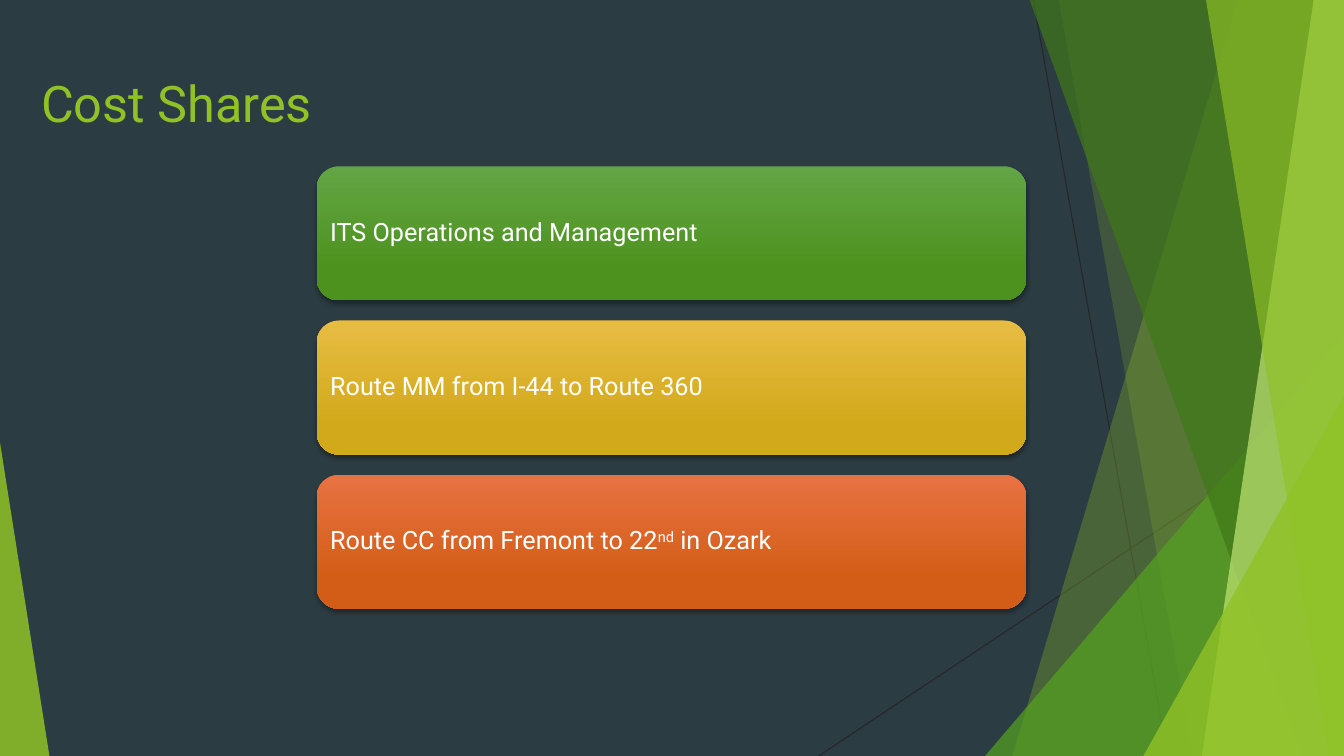
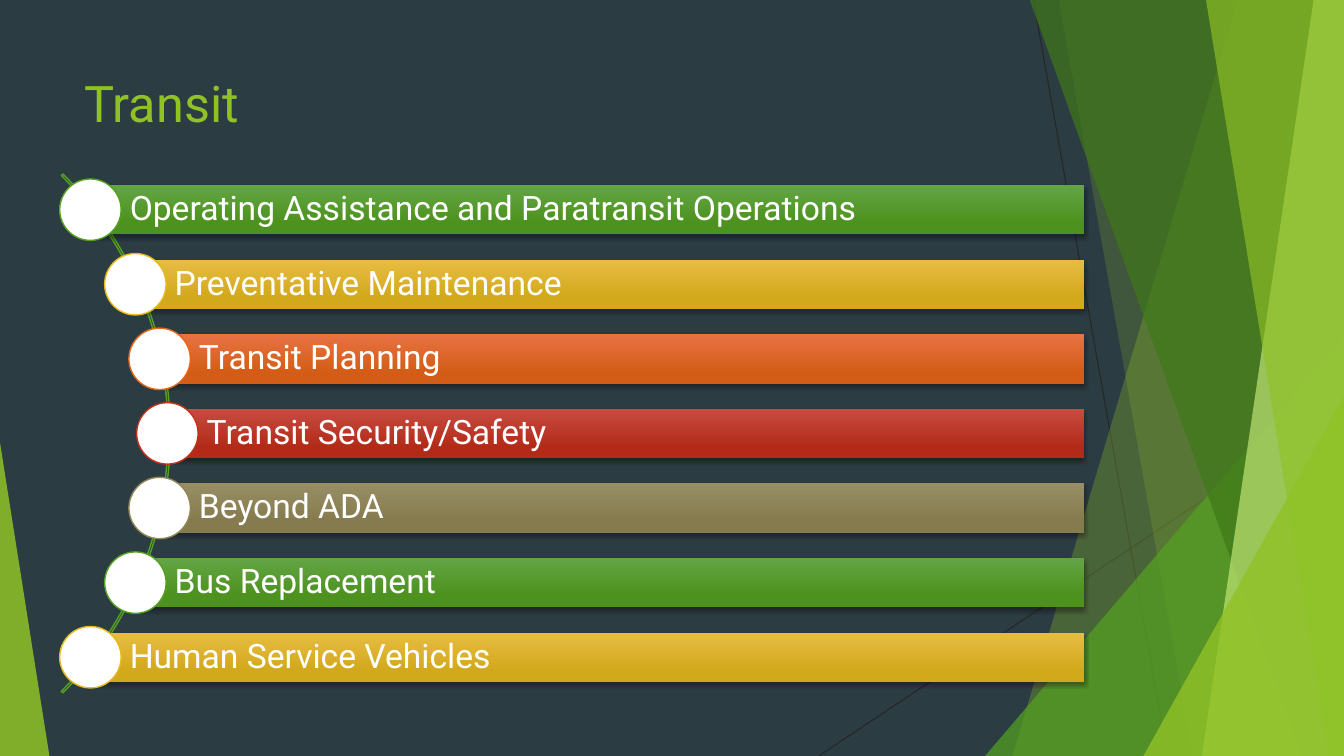
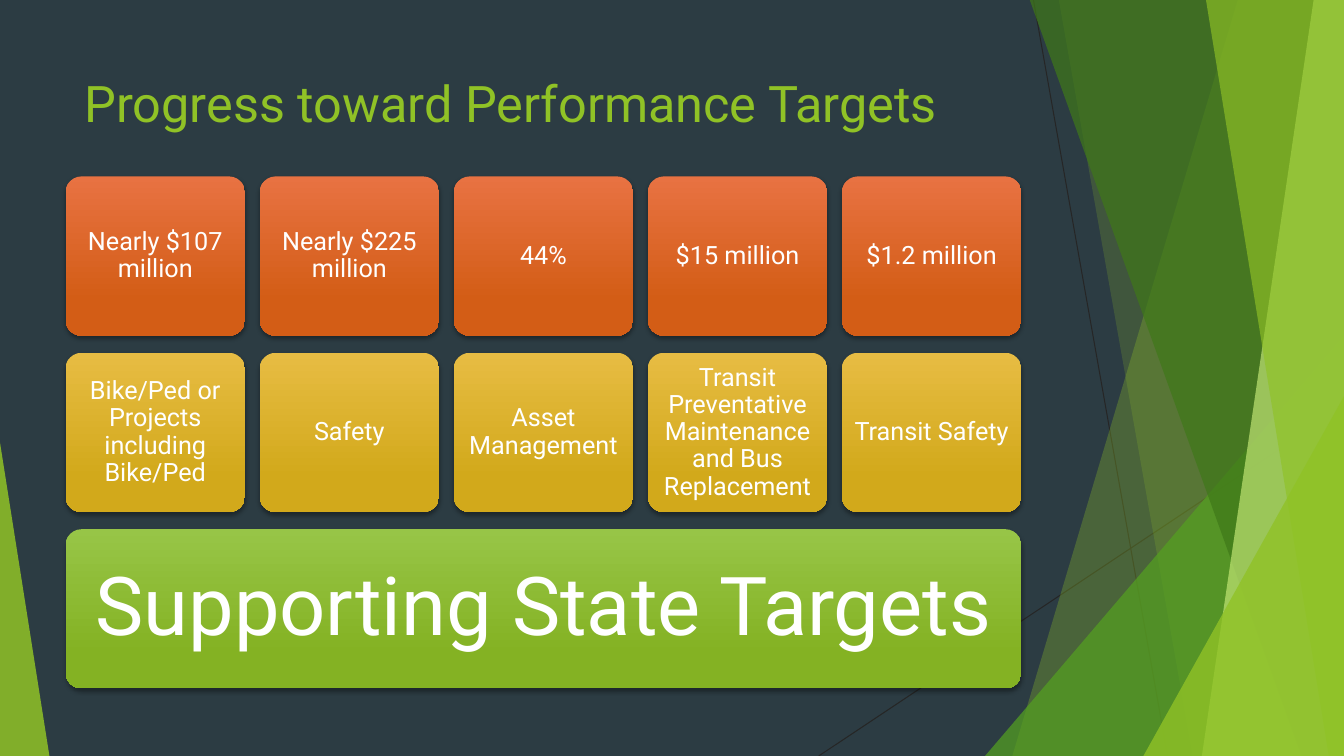
from math import sqrt

from lxml import etree
from pptx import Presentation
from pptx.dml.color import RGBColor
from pptx.enum.shapes import MSO_CONNECTOR, MSO_SHAPE
from pptx.enum.text import MSO_ANCHOR, PP_ALIGN
from pptx.oxml.ns import qn
from pptx.util import Inches, Pt

STRAIGHT = MSO_CONNECTOR.STRAIGHT
TRIANGLE = MSO_SHAPE.ISOSCELES_TRIANGLE
ROUNDED = MSO_SHAPE.ROUNDED_RECTANGLE
RECTANGLE = MSO_SHAPE.RECTANGLE
OVAL = MSO_SHAPE.OVAL
BLOCK_ARC = MSO_SHAPE.BLOCK_ARC
MIDDLE, TOP = MSO_ANCHOR.MIDDLE, MSO_ANCHOR.TOP
LEFT, CENTER = PP_ALIGN.LEFT, PP_ALIGN.CENTER

WIDTH, HEIGHT = 13.33, 7.5
FONT = "Roboto"
COLORS = {
    "background": "2C3C43", "white": "FFFFFF", "black": "000000", "hairline": "262626",
    "forest": "3F7819", "pale": "C0E474",
    "lime": "90C226", "lime_top": "97C547", "lime_bottom": "84B223",
    "green": "54A021", "green_top": "63A545", "green_bottom": "4D921E",
    "gold": "E6B91E", "gold_top": "E7BC43", "gold_bottom": "D2A91B",
    "orange": "E76618", "orange_top": "E87242", "orange_bottom": "D35D16",
    "red": "C42F1A", "red_top": "C74B42", "red_bottom": "B32B18",
    "olive": "918655", "olive_top": "988E64", "olive_bottom": "857B4E",
}


def color(name):
    return RGBColor.from_string(COLORS[name])


class Deck:
    def __init__(self):
        self.deck = Presentation()
        self.deck.slide_width = Inches(WIDTH)
        self.deck.slide_height = Inches(HEIGHT)
        self.slide = None

    def new_slide(self, title, title_left=0.74):
        self.slide = self.deck.slides.add_slide(self.deck.slide_layouts[6])
        fill = self.slide.background.fill
        fill.solid()
        fill.fore_color.rgb = color("background")
        self.backdrop()
        box = self.slide.shapes.add_textbox(
            Inches(title_left), Inches(0.67), Inches(9.4), Inches(1.44))
        self.set_text(box, [title], 36, "lime", anchor=TOP)

    def backdrop(self):
        self.hairline(10.25, 0, 11.58, HEIGHT)
        self.hairline(WIDTH, 4.03, 8.12, HEIGHT)
        self.wedge(12.28, 10.04, "lime", 30)
        self.wedge(10.5, 11.83, "lime", 20)
        self.triangle(9.77, 3.33, 3.56, 1, "green", 72)
        self.wedge(10.21, 12.91, "forest", 70)
        self.wedge(13.03, 11.92, "pale", 70)
        self.wedge(11.96, 13.18, "lime", 65)
        self.triangle(11.34, 3.93, 1.99, 1, "lime", 80)
        self.triangle(0, 4.39, 0.49, 0, "lime", 85)

    def hairline(self, x1, y1, x2, y2):
        line = self.slide.shapes.add_connector(
            STRAIGHT, Inches(x1), Inches(y1), Inches(x2), Inches(y2))
        line.line.color.rgb = color("hairline")
        line.line.width = Pt(0.75)
        etree.SubElement(line._element.spPr, qn("a:effectLst"))

    def wedge(self, top_x, bottom_x, name, opacity):
        builder = self.slide.shapes.build_freeform(Inches(top_x), Inches(-0.01))
        corners = [(WIDTH, -0.01), (WIDTH, HEIGHT), (bottom_x, HEIGHT)]
        builder.add_line_segments([(Inches(x), Inches(y)) for x, y in corners])
        self.tint(builder.convert_to_shape(), name, opacity)

    def triangle(self, left, top, width, apex, name, opacity):
        shape = self.shape(TRIANGLE, left, top, width, HEIGHT - top)
        shape.adjustments[0] = apex
        self.tint(shape, name, opacity)

    def tint(self, shape, name, opacity):
        shape.shadow.inherit = False
        shape.line.fill.background()
        shape.fill.solid()
        shape.fill.fore_color.rgb = color(name)
        fill_color = shape._element.spPr.find(".//" + qn("a:srgbClr"))
        etree.SubElement(fill_color, qn("a:alpha"), val=str(opacity * 1000))

    def shape(self, kind, left, top, width, height):
        shape = self.slide.shapes.add_shape(
            kind, Inches(left), Inches(top), Inches(width), Inches(height))
        shape.shadow.inherit = False
        return shape

    def panel(self, kind, place, name, spans, size, align=LEFT, inset=0.07,
              left_inset=None, rounding=None):
        panel = self.shape(kind, *place)
        if rounding:
            panel.adjustments[0] = rounding
        panel.line.fill.background()
        panel.fill.gradient()
        panel.fill.gradient_angle = 270
        stops = panel.fill.gradient_stops
        for stop, position, shade in zip(stops, (0, 0.78), ("top", "bottom")):
            stop.position = position
            stop.color.rgb = color(f"{name}_{shade}")
        self.drop_shadow(panel)
        self.set_text(panel, spans, size, "white", align)
        frame = panel.text_frame
        frame.margin_left = Inches(left_inset or inset)
        frame.margin_top = frame.margin_right = frame.margin_bottom = Inches(inset)
        frame.paragraphs[0].line_spacing = 0.9

    def drop_shadow(self, shape):
        effects = shape._element.spPr.find(qn("a:effectLst"))
        shadow = etree.SubElement(
            effects, qn("a:outerShdw"), blurRad=str(Pt(3)), dist=str(Pt(2)),
            dir="5400000", algn="ctr", rotWithShape="0")
        shade = etree.SubElement(shadow, qn("a:srgbClr"), val=COLORS["black"])
        etree.SubElement(shade, qn("a:alpha"), val="35000")

    def set_text(self, box, spans, size, name, align=LEFT, anchor=MIDDLE):
        frame = box.text_frame
        frame.word_wrap = True
        frame.vertical_anchor = anchor
        para = frame.paragraphs[0]
        para.alignment = align
        for index, text in enumerate(spans):
            span = para.add_run()
            span.text = text
            span.font.name = FONT
            span.font.size = Pt(size)
            span.font.color.rgb = color(name)
            if index % 2:
                span._r.get_or_add_rPr().set("baseline", "30000")

    def dot(self, center_x, center_y, size, name):
        dot = self.shape(OVAL, center_x - size / 2, center_y - size / 2, size, size)
        dot.fill.solid()
        dot.fill.fore_color.rgb = color("white")
        self.outline(dot, name)

    def arc(self, center_x, center_y, radius):
        arc = self.shape(BLOCK_ARC, center_x - radius, center_y - radius,
                         2 * radius, 2 * radius)
        for index, value in enumerate((189, 27, 0.003)):
            arc.adjustments[index] = value
        arc.fill.background()
        self.outline(arc, "green")

    def outline(self, shape, name):
        shape.line.color.rgb = color(name)
        shape.line.width = Pt(1)


def cost_shares(deck):
    deck.new_slide("Cost Shares", title_left=0.31)
    cards = [
        ("green", ["ITS Operations and Management"]),
        ("gold", ["Route MM from I-44 to Route 360"]),
        ("orange", ["Route CC from Fremont to 22", "nd", " in Ozark"]),
    ]
    for row, (name, spans) in enumerate(cards):
        deck.panel(ROUNDED, (3.14, 1.65 + row * 1.53, 7.04, 1.33), name, spans, 18)


def transit(deck):
    deck.new_slide("Transit")
    center_x, center_y, radius = -1.95, 4.3, 3.61
    pitch, bar_height, right = 0.74, 0.49, 10.75
    bars = [
        ("green", "Operating Assistance and Paratransit Operations"),
        ("gold", "Preventative Maintenance"),
        ("orange", "Transit Planning"),
        ("red", "Transit Security/Safety"),
        ("olive", "Beyond ADA"),
        ("green", "Bus Replacement"),
        ("gold", "Human Service Vehicles"),
    ]
    deck.arc(center_x, center_y, 3.64)
    for row, (name, text) in enumerate(bars):
        offset = (row - len(bars) // 2) * pitch
        left = center_x + sqrt(radius ** 2 - offset ** 2)
        middle = center_y + offset
        place = (left, middle - bar_height / 2, right - left, bar_height)
        deck.panel(RECTANGLE, place, name, [text], 24, left_inset=0.39)
        deck.dot(left, middle, 0.61, name)


def performance_targets(deck):
    deck.new_slide("Progress toward Performance Targets")
    left, top, total_width, pitch = 0.65, 1.75, 9.48, 1.75
    tile_width, tile_height = 1.78, 1.58
    rows = [
        ("orange", ["Nearly $107 million", "Nearly $225 million", "44%",
                    "$15 million", "$1.2 million"]),
        ("gold", ["Bike/Ped or Projects including Bike/Ped", "Safety",
                  "Asset Management",
                  "Transit Preventative Maintenance and Bus Replacement",
                  "Transit Safety"]),
    ]
    for row, (name, texts) in enumerate(rows):
        step = (total_width - tile_width) / (len(texts) - 1)
        for column, text in enumerate(texts):
            place = (left + column * step, top + row * pitch, tile_width, tile_height)
            deck.panel(ROUNDED, place, name, [text], 18, CENTER, rounding=0.1)
    base = (left, top + len(rows) * pitch, total_width, tile_height)
    deck.panel(ROUNDED, base, "lime", ["Supporting State Targets"], 58, CENTER,
               inset=0.24, rounding=0.1)


def main():
    deck = Deck()
    cost_shares(deck)
    transit(deck)
    performance_targets(deck)
    deck.deck.save("out.pptx")


if __name__ == "__main__":
    main()
